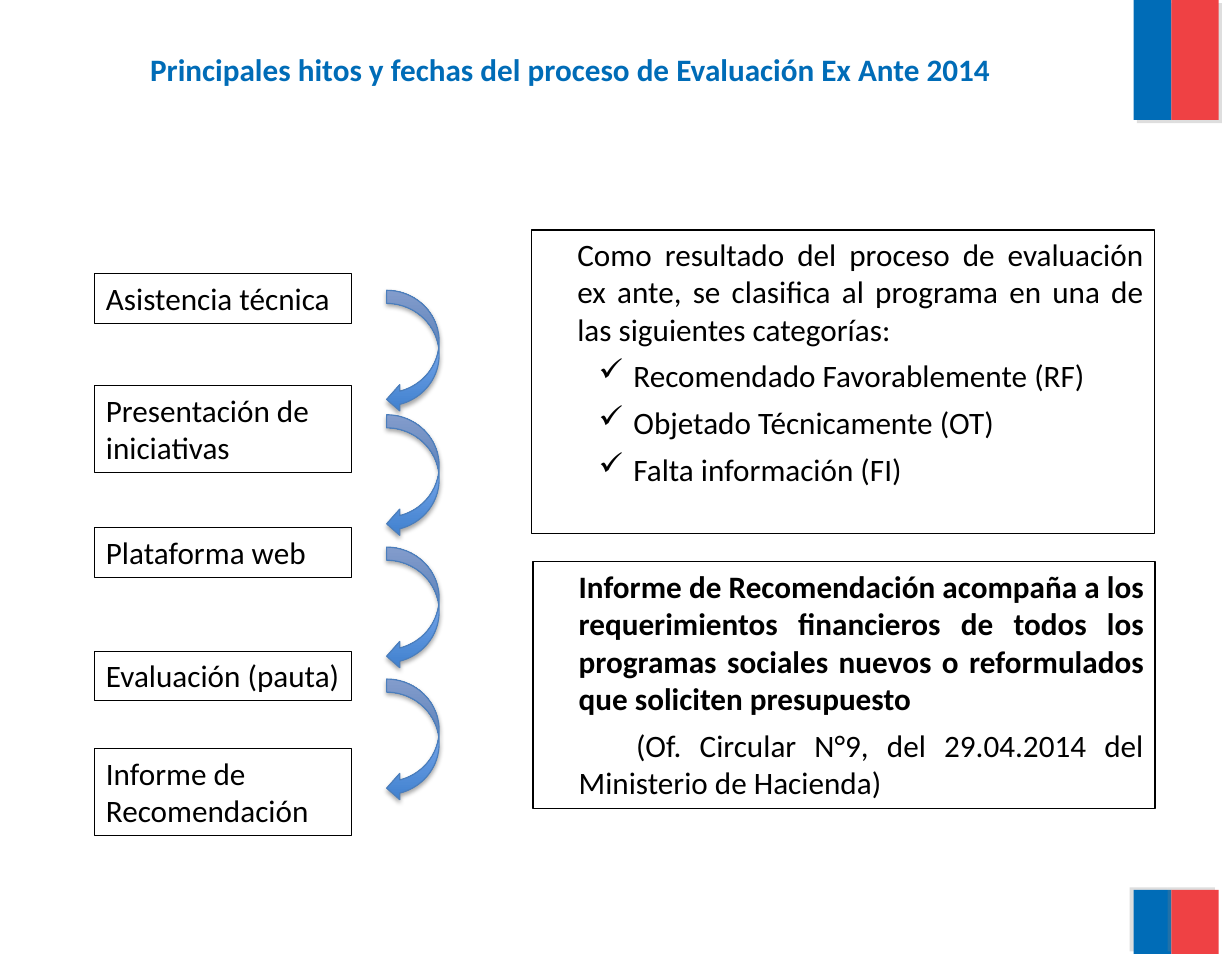
from lxml.etree import SubElement
from pptx import Presentation
from pptx.dml.color import RGBColor
from pptx.enum.shapes import MSO_SHAPE
from pptx.enum.text import MSO_ANCHOR, PP_ALIGN
from pptx.oxml.ns import qn
from pptx.util import Cm, Pt

BLUE, RED, BLACK = "006CB7", "EF4144", "000000"
BAR_GREY, ARROW_LINE = "808080", "4B7EBC"
ARROW_BOTTOM, ARROW_TOP = "3F80CE", "A4C4FF"


def color(hex_text):
    return RGBColor.from_string(hex_text)


class SlideBuilder:
    font_name = "Calibri"
    font_size = Pt(20)

    def __init__(self, slide):
        self.slide = slide

    def shape(self, kind, left, top, width, height, line=None, line_width=0.5):
        """Add an unfilled preset shape; lengths are in centimetres."""
        shape = self.slide.shapes.add_shape(
            kind, Cm(left), Cm(top), Cm(width), Cm(height))
        shape.shadow.inherit = False
        shape.fill.background()
        if line:
            shape.line.color.rgb = color(line)
            shape.line.width = Pt(line_width)
        else:
            shape.line.fill.background()
        return shape

    def shadow(self, shape, hex_text, opacity, blur, distance, angle):
        effects = shape._element.spPr.find(qn("a:effectLst"))
        outer = SubElement(
            effects, qn("a:outerShdw"), blurRad=str(Pt(blur)),
            dist=str(Pt(distance)), dir=str(angle * 60000),
            algn="ctr", rotWithShape="0")
        shade = SubElement(outer, qn("a:srgbClr"), val=hex_text)
        SubElement(shade, qn("a:alpha"), val=str(opacity * 1000))

    def style(self, paragraph, hex_text=BLACK, bold=False):
        for run in paragraph.runs:
            run.font.name = self.font_name
            run.font.size = self.font_size
            run.font.bold = bold
            run.font.color.rgb = color(hex_text)

    def bar(self, left, top, width, height, fill, shadow_angle):
        bar = self.shape(MSO_SHAPE.RECTANGLE, left, top, width, height)
        bar.fill.solid()
        bar.fill.fore_color.rgb = color(fill)
        self.shadow(bar, BAR_GREY, 25, 0, 3, shadow_angle)

    def title(self, text, left, top, width, height):
        box = self.slide.shapes.add_textbox(
            Cm(left), Cm(top), Cm(width), Cm(height))
        frame = box.text_frame
        frame.word_wrap = True
        frame.margin_left = frame.margin_right = Cm(0.28)
        frame.margin_top = frame.margin_bottom = Cm(0.15)
        frame.text = text
        paragraph = frame.paragraphs[0]
        paragraph.alignment = PP_ALIGN.CENTER
        self.style(paragraph, BLUE, bold=True)

    def framed_text(self, text, left, top, width, height, line_width=0.5):
        """Add an outlined box with one paragraph per line of text."""
        box = self.shape(MSO_SHAPE.RECTANGLE, left, top, width, height,
                         BLACK, line_width)
        frame = box.text_frame
        frame.word_wrap = True
        frame.vertical_anchor = MSO_ANCHOR.TOP
        frame.text = text
        for paragraph in frame.paragraphs:
            paragraph.alignment = PP_ALIGN.LEFT
            self.style(paragraph)
        return frame.paragraphs

    def justify(self, paragraph, margin, indent=0, bullet=None):
        paragraph.alignment = PP_ALIGN.JUSTIFY
        paragraph.space_before = Pt(6)
        properties = paragraph._p.get_or_add_pPr()
        properties.set("marL", str(Cm(margin)))
        properties.set("indent", str(Cm(indent)))
        if bullet:
            paragraph.level = 1
            SubElement(properties, qn("a:buChar"), char=bullet)

    def curved_arrow(self, left, top, width, height):
        arrow = self.shape(MSO_SHAPE.CURVED_LEFT_ARROW, left, top, width,
                           height, ARROW_LINE, 0.75)
        arrow.fill.gradient()
        arrow.fill.gradient_angle = 90
        for stop, shade in zip(arrow.fill.gradient_stops,
                               (ARROW_BOTTOM, ARROW_TOP)):
            stop.color.rgb = color(shade)
        self.shadow(arrow, BLACK, 35, 3.1, 1.8, 90)


def main():
    presentation = Presentation()
    presentation.slide_width = Cm(27.91)
    presentation.slide_height = Cm(21.62)
    builder = SlideBuilder(
        presentation.slides.add_slide(presentation.slide_layouts[6]))

    for top, height, shadow_angle in ((0, 2.72, 45), (20.17, 1.45, 215)):
        builder.bar(25.68, top, 0.86, height, BLUE, shadow_angle)
        builder.bar(26.54, top, 1.07, height, RED, shadow_angle)

    builder.title(
        "Principales hitos y fechas del proceso de Evaluación Ex Ante 2014",
        0.46, 0.99, 24.92, 2.59)

    one_line, two_lines = 1.12, 1.96
    steps = (
        ("Asistencia técnica", 6.2, one_line),
        ("Presentación de iniciativas", 8.74, two_lines),
        ("Plataforma web", 11.96, one_line),
        ("Evaluación (pauta)", 14.76, one_line),
        ("Informe de Recomendación", 16.97, two_lines),
    )
    for text, top, height in steps:
        builder.framed_text(text, 2.15, top, 5.82, height)

    for top in (6.58, 9.4, 12.4, 15.39):
        builder.curved_arrow(8.76, top, 1.19, 2.77)

    introduction, *categories = builder.framed_text(
        "Como resultado del proceso de evaluación ex ante, se clasifica al "
        "programa en una de las siguientes categorías:\n"
        "Recomendado Favorablemente (RF)\n"
        "Objetado Técnicamente (OT)\n"
        "Falta información (FI)",
        12.04, 5.21, 14.12, 6.88, 1)
    builder.justify(introduction, 0.79)
    for category in categories:
        builder.justify(category, 2.06, -0.79, "✓")

    report, circular = builder.framed_text(
        "Informe de Recomendación acompaña a los requerimientos financieros "
        "de todos los programas sociales nuevos o reformulados que soliciten "
        "presupuesto\n"
        "(Of. Circular N°9, del 29.04.2014 del Ministerio de Hacienda)",
        12.07, 12.73, 14.1, 5.59, 1)
    builder.style(report, bold=True)
    builder.justify(report, 0.79)
    builder.justify(circular, 0.79, 1.3)

    presentation.save("out.pptx")


if __name__ == "__main__":
    main()
